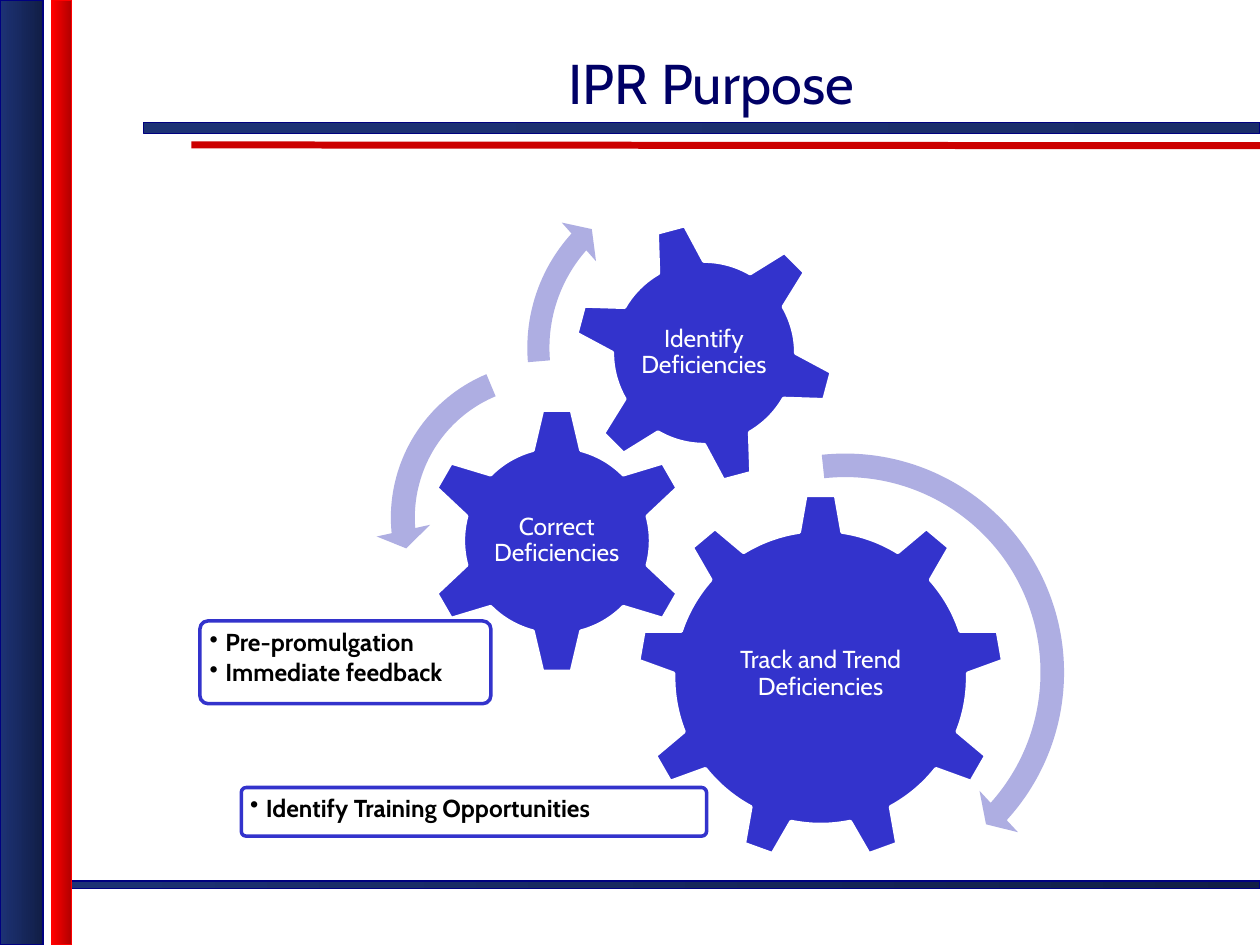
"""Build the IPR Purpose slide: three meshing gears with callouts and rotation arrows."""
from dataclasses import dataclass

from lxml import etree
from pptx import Presentation
from pptx import util as u
from pptx.dml.color import RGBColor
from pptx.enum import shapes, text
from pptx.oxml import ns

FONT = "Cabin"
COLORS = {
    "navy": "1D3275", "navy_mid": "1A2D69", "navy_dark": "111E46", "navy_edge": "000080",
    "red": "FF0000", "red_dark": "B20000", "red_rule": "CC0000",
    "title": "000066", "gear": "3333CC", "arrow": "AEAEE2",
    "white": "FFFFFF", "black": "000000",
}
Box = tuple[float, float, float, float]


@dataclass
class Bar:
    box: Box
    start: str
    end: str
    edge: str


@dataclass
class Gear:
    kind: shapes.MSO_SHAPE
    box: Box
    label: str
    label_box: Box
    rotation: float = 0


@dataclass
class Callout:
    box: Box
    bullets: list[str]


@dataclass
class Arrow:
    kind: shapes.MSO_SHAPE
    box: Box
    adjustments: list[float]


BARS = [
    Bar((33.1, 503.3, 686.9, 4.5), "navy", "navy_dark", "navy_edge"),
    Bar((82.1, 70, 637.9, 6.4), "navy", "navy_mid", "navy_edge"),
    Bar((0, 0, 24.6, 540), "navy", "navy_dark", "navy_edge"),
    Bar((29.5, 0, 11.3, 540), "red", "red_dark", "red"),
]
GEARS = [
    Gear(shapes.MSO_SHAPE.GEAR_9, (364, 282.2, 210, 210),
         "Track and Trend Deficiencies", (406.2, 331.3, 125.5, 108)),
    Gear(shapes.MSO_SHAPE.GEAR_6, (241.9, 232.6, 152.8, 152.8),
         "Correct Deficiencies", (280.3, 270.9, 75.8, 75.8)),
    Gear(shapes.MSO_SHAPE.GEAR_6, (327.5, 126.8, 149.7, 149.7),
         "Identify Deficiencies", (360.2, 159.5, 84.2, 84.2), 345),
]
CALLOUTS = [
    Callout((137.9, 450, 265.9, 27.8), ["Identify Training Opportunities"]),
    Callout((114.2, 354.8, 166.3, 47.3), ["Pre-promulgation", "Immediate feedback"]),
]
ARROWS = [
    Arrow(shapes.MSO_SHAPE.CIRCULAR_ARROW, (348.5, 249.8, 269, 269),
          [0.05, 2.99, 25.3, 158.32, 0.06]),
    Arrow(shapes.MSO_SHAPE.LEFT_CIRCULAR_ARROW, (214.6, 198.2, 195.3, 195.3),
          [0.07, 4.3, 104.89, 148.38, 0.08]),
    Arrow(shapes.MSO_SHAPE.CIRCULAR_ARROW, (292.9, 93.4, 210.7, 210.7),
          [0.06, 3.94, 133.14, 105.08, 0.07]),
]


def rgb(name: str) -> RGBColor:
    return RGBColor.from_string(COLORS[name])


def points(box: Box) -> list[u.Length]:
    return [u.Pt(value) for value in box]


def add_solid(slide, kind, box: Box, fill: str, edge: str | None = None):
    solid = slide.shapes.add_shape(kind, *points(box))
    solid.shadow.inherit = False
    solid.fill.solid()
    solid.fill.fore_color.rgb = rgb(fill)
    if edge:
        solid.line.color.rgb = rgb(edge)
        solid.line.width = u.Pt(2)
    else:
        solid.line.fill.background()
    return solid


def set_margins(frame, margin: float) -> None:
    frame.word_wrap = True
    frame.margin_left = frame.margin_right = u.Pt(margin)
    frame.margin_top = frame.margin_bottom = u.Pt(margin)


def style(paragraph, color: str, after: float, bold: bool = False) -> None:
    paragraph.line_spacing = 0.9
    paragraph.space_after = u.Pt(after)
    paragraph.font.name = FONT
    paragraph.font.size = u.Pt(14)
    paragraph.font.bold = bold
    paragraph.font.color.rgb = rgb(color)


def add_bar(slide, bar: Bar) -> None:
    stripe = slide.shapes.add_shape(shapes.MSO_SHAPE.RECTANGLE, *points(bar.box))
    stripe.shadow.inherit = False
    stripe.fill.gradient()
    stripe.fill.gradient_angle = 0
    for stop, position, color in zip(stripe.fill.gradient_stops, (0, 1), (bar.start, bar.end)):
        stop.position = position
        stop.color.rgb = rgb(color)
    stripe.line.color.rgb = rgb(bar.edge)
    stripe.line.width = u.Pt(1)


def add_red_rule(slide) -> None:
    rule = slide.shapes.add_connector(
        shapes.MSO_CONNECTOR.STRAIGHT, *points((109.4, 82.8, 720, 83.3)))
    rule.line.color.rgb = rgb("red_rule")
    rule.line.width = u.Pt(4)
    etree.SubElement(rule.element.spPr, ns.qn("a:effectLst"))


def add_title(slide) -> None:
    title = slide.shapes.title
    title.left, title.top, title.width, title.height = points((126, 0, 560.9, 69.8))
    title.text_frame.text = "IPR Purpose"
    title.text_frame.vertical_anchor = text.MSO_ANCHOR.BOTTOM
    heading = title.text_frame.paragraphs[0]
    heading.alignment = text.PP_ALIGN.CENTER
    heading.font.name = FONT
    heading.font.size = u.Pt(32)
    heading.font.color.rgb = rgb("title")


def add_gear(slide, gear: Gear) -> None:
    add_solid(slide, gear.kind, gear.box, "gear", "white").rotation = gear.rotation
    frame = slide.shapes.add_textbox(*points(gear.label_box)).text_frame
    set_margins(frame, 1.4)
    frame.vertical_anchor = text.MSO_ANCHOR.MIDDLE
    frame.text = gear.label
    frame.paragraphs[0].alignment = text.PP_ALIGN.CENTER
    style(frame.paragraphs[0], "white", 4.9)


def add_callout(slide, callout: Callout) -> None:
    panel = add_solid(slide, shapes.MSO_SHAPE.ROUNDED_RECTANGLE, callout.box, "white", "gear")
    panel.adjustments[0] = 0.1
    fill_color = panel.element.spPr.find(ns.qn("a:solidFill"))[0]
    etree.SubElement(fill_color, ns.qn("a:alpha"), val="90000")
    frame = panel.text_frame
    set_margins(frame, 4.2)
    frame.vertical_anchor = text.MSO_ANCHOR.TOP
    frame.text = "\n".join(callout.bullets)
    for paragraph in frame.paragraphs:
        paragraph.level = 1
        paragraph.alignment = text.PP_ALIGN.LEFT
        properties = paragraph._p.get_or_add_pPr()
        properties.set("marL", str(u.Pt(9)))
        properties.set("indent", str(u.Pt(-9)))
        etree.SubElement(properties, ns.qn("a:buChar"), char="•")
        style(paragraph, "black", 2.1, bold=True)


def add_arrow(slide, arrow: Arrow) -> None:
    curve = add_solid(slide, arrow.kind, arrow.box, "arrow")
    for index, value in enumerate(arrow.adjustments):
        curve.adjustments[index] = value


def main() -> None:
    deck = Presentation()
    deck.slide_width, deck.slide_height = u.Pt(720), u.Pt(540)
    slide = deck.slides.add_slide(deck.slide_layouts[5])
    add_red_rule(slide)
    for bar in BARS:
        add_bar(slide, bar)
    add_title(slide)
    for gear, callout in zip(GEARS, CALLOUTS):
        add_gear(slide, gear)
        add_callout(slide, callout)
    add_gear(slide, GEARS[-1])
    for arrow in ARROWS:
        add_arrow(slide, arrow)
    deck.save("out.pptx")


if __name__ == "__main__":
    main()
